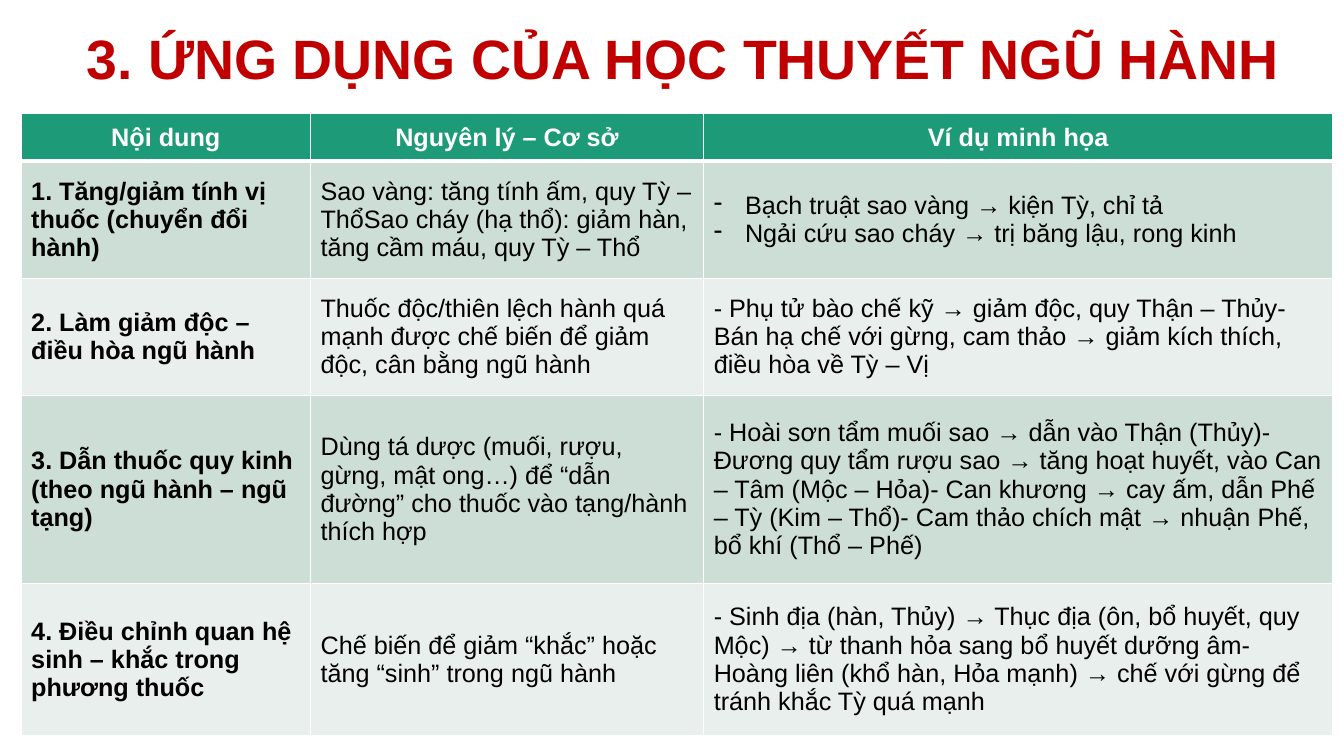
"""Build a slide with a title and a table on applying the Five Elements theory."""
from pptx import Presentation
from pptx.dml.color import RGBColor
from pptx.enum.text import MSO_ANCHOR, PP_ALIGN
from pptx.oxml import parse_xml
from pptx.oxml.ns import nsdecls
from pptx.util import Inches, Pt

WHITE = RGBColor(0xFF, 0xFF, 0xFF)
BLACK = RGBColor(0x00, 0x00, 0x00)
RED = RGBColor(0xC0, 0x00, 0x00)
GREEN = RGBColor(0x1D, 0x9A, 0x78)
BANDS = (RGBColor(0xE8, 0xEF, 0xEC), RGBColor(0xCD, 0xDE, 0xD6))

TITLE = "3. ỨNG DỤNG CỦA HỌC THUYẾT NGŨ HÀNH"
COLUMN_WIDTHS = (2.87, 3.9, 6.24)
ROW_HEIGHTS = (0.47, 1.16, 1.16, 1.86, 1.51)
BULLET_INDENT = Inches(0.31)
BULLET_MARK = "- "
BULLETED_CELL = (1, 2)
ROWS = (
    ("Nội dung", "Nguyên lý – Cơ sở", "Ví dụ minh họa"),
    (
        "1. Tăng/giảm tính vị thuốc (chuyển đổi hành)",
        "Sao vàng: tăng tính ấm, quy Tỳ – ThổSao cháy (hạ thổ): giảm hàn, "
        "tăng cầm máu, quy Tỳ – Thổ",
        "Bạch truật sao vàng → kiện Tỳ, chỉ tả\n"
        "Ngải cứu sao cháy → trị băng lậu, rong kinh",
    ),
    (
        "2. Làm giảm độc – điều hòa ngũ hành",
        "Thuốc độc/thiên lệch hành quá mạnh được chế biến để giảm độc, "
        "cân bằng ngũ hành",
        "- Phụ tử bào chế kỹ → giảm độc, quy Thận – Thủy- Bán hạ chế với gừng, "
        "cam thảo → giảm kích thích, điều hòa về Tỳ – Vị",
    ),
    (
        "3. Dẫn thuốc quy kinh (theo ngũ hành – ngũ tạng)",
        "Dùng tá dược (muối, rượu, gừng, mật ong…) để “dẫn đường” cho thuốc "
        "vào tạng/hành thích hợp",
        "- Hoài sơn tẩm muối sao → dẫn vào Thận (Thủy)- Đương quy tẩm rượu sao "
        "→ tăng hoạt huyết, vào Can – Tâm (Mộc – Hỏa)- Can khương → cay ấm, "
        "dẫn Phế – Tỳ (Kim – Thổ)- Cam thảo chích mật → nhuận Phế, bổ khí "
        "(Thổ – Phế)",
    ),
    (
        "4. Điều chỉnh quan hệ sinh – khắc trong phương thuốc",
        "Chế biến để giảm “khắc” hoặc tăng “sinh” trong ngũ hành",
        "- Sinh địa (hàn, Thủy) → Thục địa (ôn, bổ huyết, quy Mộc) → từ thanh "
        "hỏa sang bổ huyết dưỡng âm- Hoàng liên (khổ hàn, Hỏa mạnh) → chế với "
        "gừng để tránh khắc Tỳ quá mạnh",
    ),
)


def format_paragraph(paragraph, size, color, bold, alignment):
    """Apply the font and alignment to one paragraph."""
    paragraph.alignment = alignment
    paragraph.font.color.rgb = color
    font_format = {"name": "Arial", "size": Pt(size), "bold": bold}
    for name, value in font_format.items():
        setattr(paragraph.font, name, value)


def add_bullet(paragraph):
    """Give a paragraph a dash bullet with a hanging indent."""
    properties = paragraph._p.get_or_add_pPr()
    for name, value in {"marL": BULLET_INDENT, "indent": -BULLET_INDENT}.items():
        properties.set(name, str(int(value)))
    bullet = parse_xml(f'<a:buChar {nsdecls("a")} char="{BULLET_MARK.strip()}"/>')
    properties.insert_element_before(bullet, "a:tabLst", "a:defRPr", "a:extLst")


def add_borders(cell, widths):
    """Draw white cell borders with the given width in points for each side."""
    properties = cell._tc.get_or_add_tcPr()
    for index, (side, width) in enumerate(widths.items()):
        border = parse_xml(
            f'<a:ln{side} {nsdecls("a")} w="{int(Pt(width))}"><a:solidFill>'
            f'<a:srgbClr val="{WHITE}"/></a:solidFill></a:ln{side}>'
        )
        properties.insert(index, border)


def fill_cell(cell, text, row, column):
    """Write and style one table cell according to its place."""
    header = row == 0
    cell.text = text
    cell.vertical_anchor = MSO_ANCHOR.MIDDLE
    cell.fill.solid()
    cell.fill.fore_color.rgb = GREEN if header else BANDS[row % 2]
    add_borders(cell, {
        "L": 1, "R": 1, "T": 3 if row == 1 else 1, "B": 3 if header else 1,
    })
    for paragraph in cell.text_frame.paragraphs:
        format_paragraph(
            paragraph,
            18,
            WHITE if header else BLACK,
            header or column == 0,
            PP_ALIGN.CENTER if header else PP_ALIGN.LEFT,
        )
        if (row, column) == BULLETED_CELL:
            add_bullet(paragraph)


def add_title(slide, left, top, width, height):
    """Place the centred title in the given box."""
    frame = slide.shapes.add_textbox(left, top, width, height).text_frame
    frame_format = {"word_wrap": True, "vertical_anchor": MSO_ANCHOR.MIDDLE}
    for name, value in frame_format.items():
        setattr(frame, name, value)
    paragraph = frame.paragraphs[0]
    paragraph.text = TITLE
    paragraph.line_spacing = 0.9
    format_paragraph(paragraph, 39.6, RED, True, PP_ALIGN.CENTER)


def add_applications_table(slide, left, top, width, height):
    """Place the table of applications in the given box."""
    table = slide.shapes.add_table(
        len(ROWS), len(COLUMN_WIDTHS), left, top, width, height
    ).table
    for column, share in zip(table.columns, COLUMN_WIDTHS):
        column.width = int(width * share / sum(COLUMN_WIDTHS))
    for row, share in zip(table.rows, ROW_HEIGHTS):
        row.height = int(height * share / sum(ROW_HEIGHTS))
    for row, texts in enumerate(ROWS):
        for column, text in enumerate(texts):
            fill_cell(table.cell(row, column), text, row, column)


def main():
    """Create the presentation and save it."""
    presentation = Presentation()
    presentation.slide_width = Inches(13.33)
    presentation.slide_height = Inches(7.5)
    slide = presentation.slides.add_slide(presentation.slide_layouts[6])
    add_applications_table(
        slide, Inches(0.21), Inches(1.13), Inches(13.01), Inches(6.17)
    )
    add_title(slide, Inches(0.33), Inches(0.2), Inches(12.89), Inches(0.82))
    presentation.save("out.pptx")


if __name__ == "__main__":
    main()
